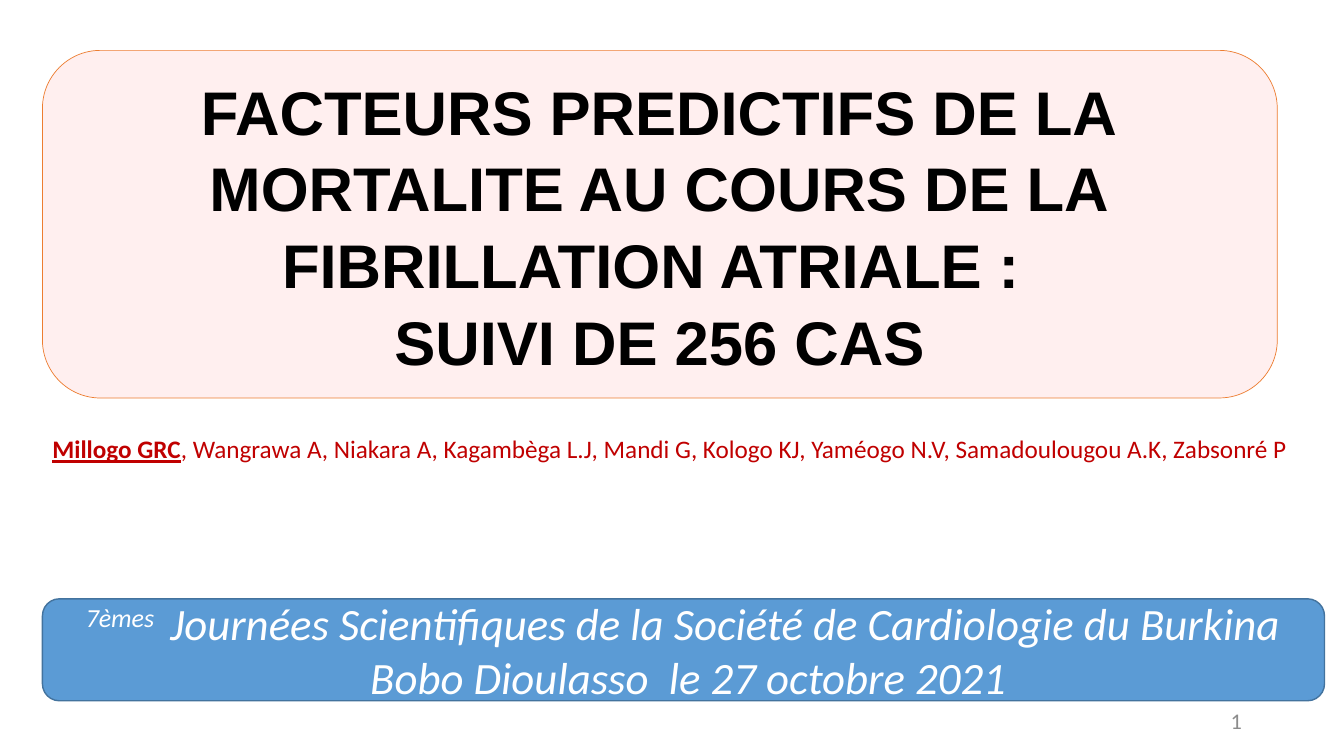
from pptx import Presentation
from pptx.dml.color import RGBColor
from pptx.enum.shapes import MSO_SHAPE
from pptx.enum.text import MSO_ANCHOR, MSO_AUTO_SIZE, PP_ALIGN
from pptx.util import Cm, Pt

COLORS = {
    "title_fill": "FFEFEF",
    "title_line": "ED7D31",
    "title_text": "000000",
    "authors": "C00000",
    "event_fill": "5B9BD5",
    "event_line": "43739E",
    "event_text": "FFFFFF",
    "page_number": "8C8C8C",
}
LEFT = 1.07
TITLE_LINES = [
    "FACTEURS PREDICTIFS DE LA",
    "MORTALITE AU COURS DE LA",
    "FIBRILLATION ATRIALE : ",
    "SUIVI DE 256 CAS",
]
LEAD_AUTHOR = "Millogo GRC"
CO_AUTHORS = (
    ", Wangrawa A, Niakara A, Kagambèga L.J, Mandi G, Kologo KJ, "
    "Yaméogo N.V, Samadoulougou A.K, Zabsonré P"
)
EVENT_LINES = [
    ["7èmes ", " Journées Scientifiques de la Société de Cardiologie du Burkina"],
    [" Bobo Dioulasso  le 27 octobre 2021"],
]


def rgb(name):
    return RGBColor.from_string(COLORS[name])


def style(run, size, color, font="Calibri", bold=False, italic=False):
    run.font.size = Pt(size)
    run.font.name = font
    run.font.bold = bold
    run.font.italic = italic
    run.font.color.rgb = rgb(color)


def add_panel(slide, box, fill, line, line_width):
    panel = slide.shapes.add_shape(MSO_SHAPE.ROUNDED_RECTANGLE, *map(Cm, box))
    panel.shadow.inherit = False
    panel.fill.solid()
    panel.fill.fore_color.rgb = rgb(fill)
    panel.line.color.rgb = rgb(line)
    panel.line.width = Pt(line_width)
    panel.text_frame.word_wrap = True
    panel.text_frame.vertical_anchor = MSO_ANCHOR.MIDDLE
    return panel.text_frame


def add_title(slide, box):
    title = add_panel(slide, box, "title_fill", "title_line", 0.5)
    title.text = "\n".join(TITLE_LINES)
    for line in title.paragraphs:
        line.alignment = PP_ALIGN.CENTER
        line.line_spacing = 1.04
        style(line.runs[0], 44, "title_text", "Arial", bold=True)


def add_page_number(slide, box):
    number = slide.shapes.add_textbox(*map(Cm, box)).text_frame
    number.word_wrap = True
    number.vertical_anchor = MSO_ANCHOR.MIDDLE
    number.text = "1"
    number.paragraphs[0].alignment = PP_ALIGN.RIGHT
    style(number.paragraphs[0].runs[0], 16, "page_number")


def add_authors(slide, box):
    authors = slide.shapes.add_textbox(*map(Cm, box)).text_frame
    authors.word_wrap = True
    authors.auto_size = MSO_AUTO_SIZE.SHAPE_TO_FIT_TEXT
    names = authors.paragraphs[0]
    names.text = LEAD_AUTHOR
    names.add_run().text = CO_AUTHORS
    lead, others = names.runs
    style(lead, 18, "authors", bold=True)
    lead.font.underline = True
    style(others, 18, "authors")


def add_event(slide, box):
    event = add_panel(slide, box, "event_fill", "event_line", 1)
    event.text = "\n".join(parts[0] for parts in EVENT_LINES)
    for line, parts in zip(event.paragraphs, EVENT_LINES):
        line.alignment = PP_ALIGN.CENTER
        for part in parts[1:]:
            line.add_run().text = part
        for run in line.runs:
            style(run, 32, "event_text", italic=True)
    ordinal = event.paragraphs[0].runs[0]
    ordinal.font._element.set("baseline", "30000")


def main():
    deck = Presentation()
    deck.slide_width, deck.slide_height = Cm(33.87), Cm(19.05)
    slide = deck.slides.add_slide(deck.slide_layouts[6])
    add_title(slide, (LEFT, 1.27, 31.12, 8.76))
    add_page_number(slide, (23.93, 17.65, 7.62, 1.02))
    add_authors(slide, (LEFT, 10.8, 33.25, 1.02))
    add_event(slide, (LEFT, 15.09, 32.31, 2.57))
    deck.save("out.pptx")


if __name__ == "__main__":
    main()
